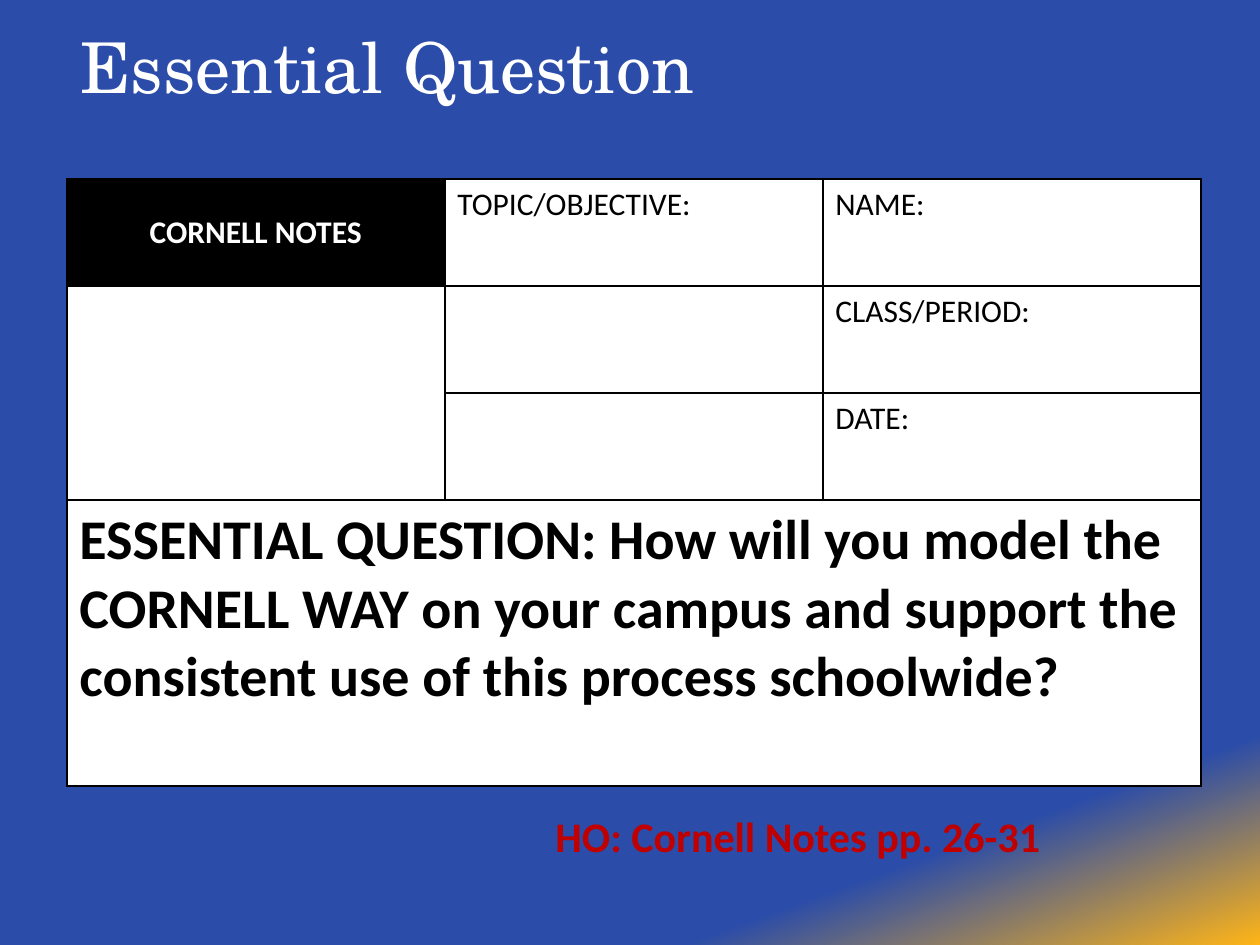
from lxml import etree
from pptx import Presentation
from pptx.dml.color import RGBColor
from pptx.enum import text
from pptx.oxml import ns
from pptx.util import Inches, Pt


def rgb(value):
    """Turn a hex string into a colour."""
    return RGBColor.from_string(value)


def style(p, size, color, bold=False, name="Calibri"):
    """Set the font of a paragraph."""
    p.font.name, p.font.size, p.font.bold = name, Pt(size), bold
    p.font.color.rgb = rgb(color)


def add_background(s):
    """Fill the slide with a blue gradient that ends in gold."""
    fill = s.background.fill
    fill.gradient()
    fill.gradient_angle = 290
    for stop, (position, color) in zip(fill.gradient_stops, ((0.85, "2B4CA8"), (1, "FFB517"))):
        stop.position = position
        stop.color.rgb = rgb(color)


def add_text(s, box, wording):
    """Place a one-paragraph text box and return its paragraph."""
    tf = s.shapes.add_textbox(*map(Inches, box)).text_frame
    tf.word_wrap = True
    p = tf.paragraphs[0]
    p.text = wording
    return p


def add_title(s, box):
    """Place the slide title with its hanging indent."""
    p = add_text(s, box, "Essential Question")
    pPr = p._p.get_or_add_pPr()
    pPr.set("marL", str(Inches(0.38)))
    pPr.set("indent", str(Inches(-0.38)))
    style(p, 40, "FFFFFF", name="TeX Gyre Schola")


def add_borders(cell, color="000000", width=1):
    """Draw a thin line on each side of a cell."""
    tcPr = cell._tc.get_or_add_tcPr()
    for i, side in enumerate(("lnL", "lnR", "lnT", "lnB")):
        ln = etree.Element(ns.qn(f"a:{side}"), w=str(Pt(width)))
        fill = etree.SubElement(ln, ns.qn("a:solidFill"))
        etree.SubElement(fill, ns.qn("a:srgbClr"), val=color)
        tcPr.insert(i, ln)


def add_notes_table(s, box):
    """Place the Cornell notes form."""
    question = ("ESSENTIAL QUESTION: How will you model the CORNELL WAY on your campus "
                "and support the consistent use of this process schoolwide?")
    rows = [("CORNELL NOTES", "TOPIC/OBJECTIVE:", "NAME:"),
            ("", "", "CLASS/PERIOD:"),
            ("", "", "DATE:"),
            (question, "", "")]
    table = s.shapes.add_table(4, 3, *map(Inches, box)).table
    table.first_row = table.horz_banding = False
    for row, height in zip(table.rows, (0.85, 0.85, 0.85, box[3] - 3 * 0.85)):
        row.height = Inches(height)
    table.cell(1, 0).merge(table.cell(2, 0))
    table.cell(3, 0).merge(table.cell(3, 2))
    for i, row in enumerate(rows):
        for j, wording in enumerate(row):
            cell = table.cell(i, j)
            heading, essential = (i, j) == (0, 0), i == 3
            cell.fill.solid()
            cell.fill.fore_color.rgb = rgb("000000" if heading else "FFFFFF")
            add_borders(cell)
            p = cell.text_frame.paragraphs[0]
            p.text = wording
            style(p, 32 if essential else 18, "FFFFFF" if heading else "000000",
                  heading or essential)
            if heading:
                p.alignment = text.PP_ALIGN.CENTER
                cell.vertical_anchor = text.MSO_ANCHOR.MIDDLE


def add_handout(s, box):
    """Place the handout reference."""
    style(add_text(s, box, "HO: Cornell Notes pp. 26-31"), 24, "C00000", True)


def main():
    """Build the slide and save it."""
    prs = Presentation()
    prs.slide_width, prs.slide_height = Inches(10), Inches(7.5)
    s = prs.slides.add_slide(prs.slide_layouts[6])
    add_background(s)
    add_title(s, (0.54, 0.14, 8.26, 0.63))
    add_notes_table(s, (0.53, 1.42, 9, 4.82))
    add_handout(s, (4.31, 6.38, 5.27, 0.81))
    prs.save("out.pptx")


if __name__ == "__main__":
    main()
